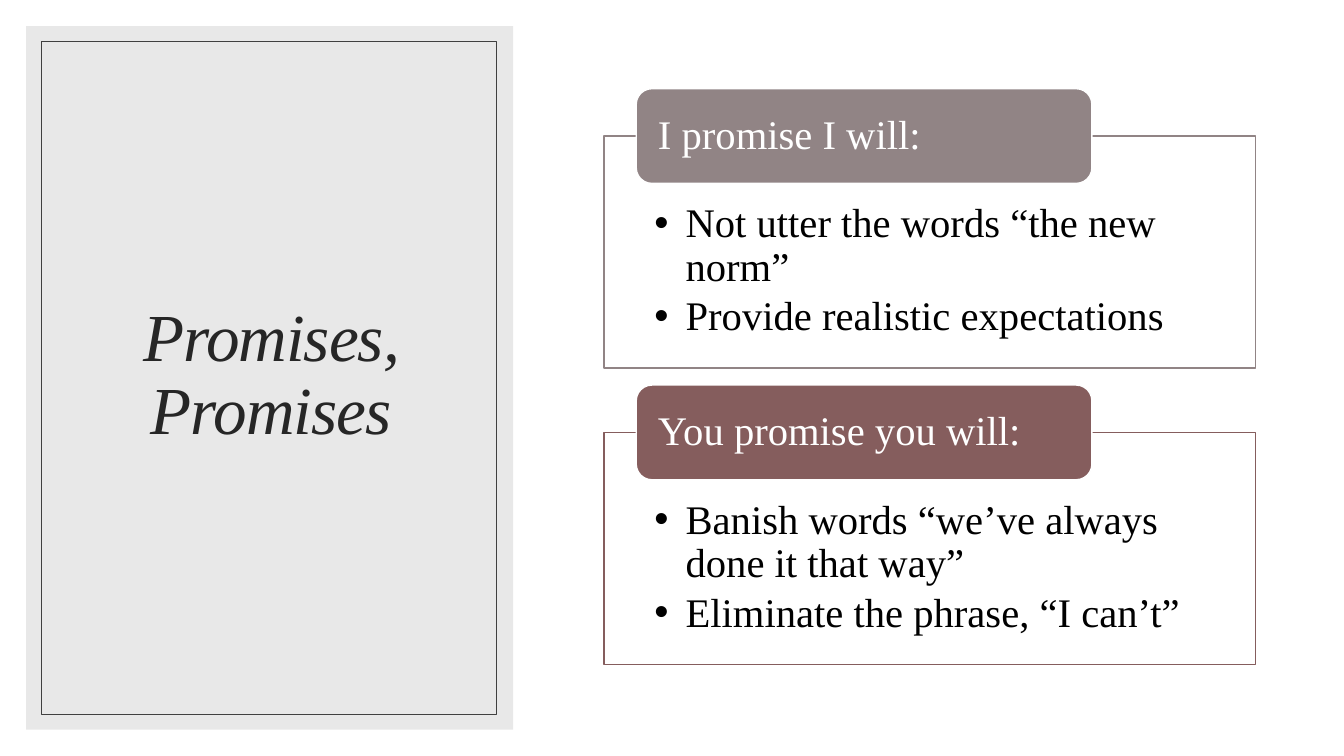
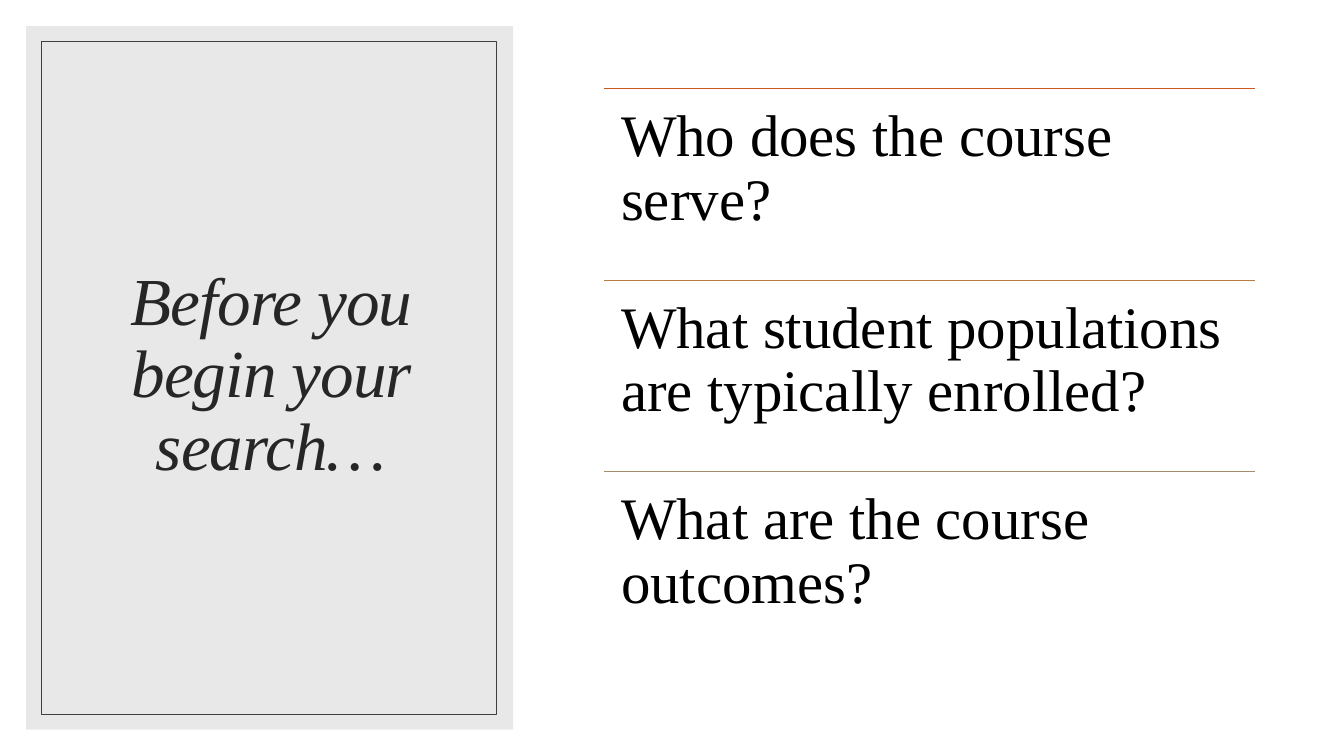
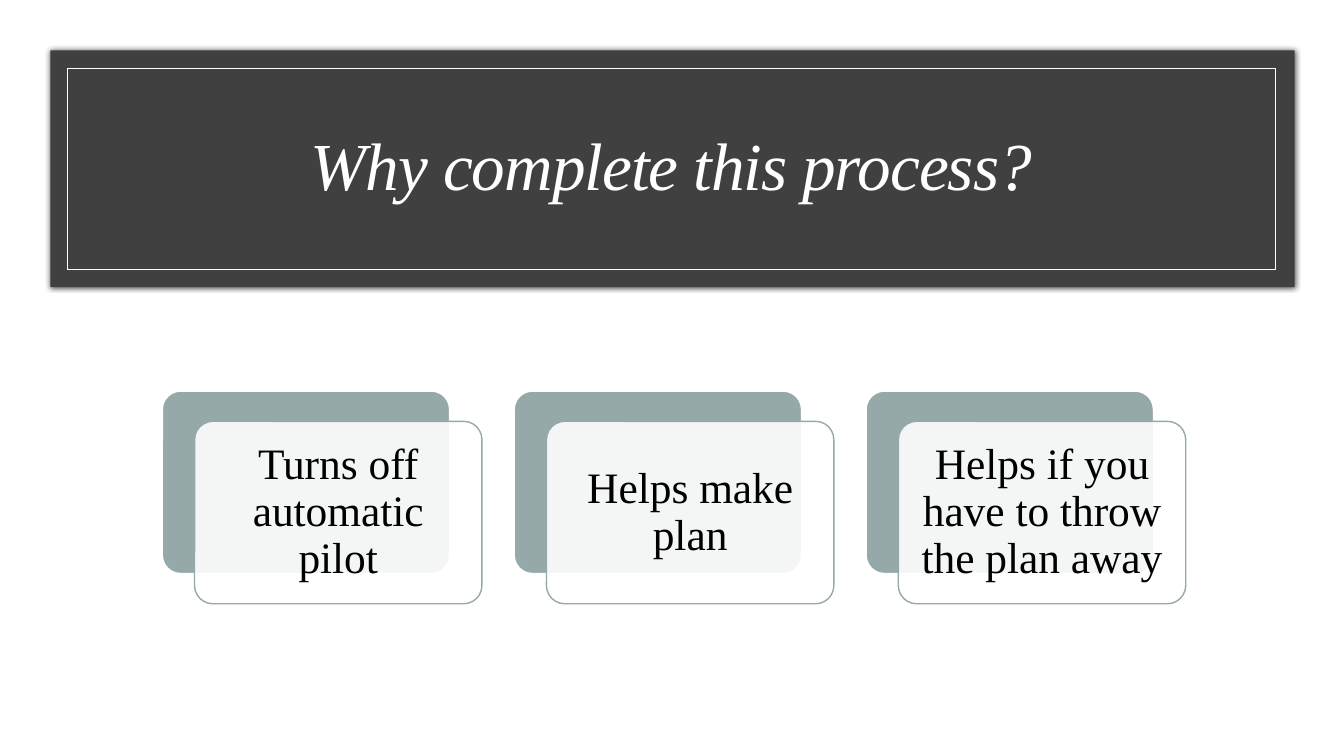
from lxml import etree
from pptx import Presentation
from pptx.dml.color import RGBColor
from pptx.enum.shapes import MSO_CONNECTOR, MSO_SHAPE
from pptx.enum.text import MSO_ANCHOR, MSO_AUTO_SIZE, PP_ALIGN
from pptx.oxml.ns import qn
from pptx.util import Pt

PX = 9144  # EMU in one px, 100 px to the inch
SLIDE_WIDTH, SLIDE_HEIGHT = 1333, 750
FONT = "Times New Roman"
COLORS = {
    "white": "FFFFFF",
    "black": "000000",
    "panel": "E8E8E8",
    "dark": "404040",
    "title": "262626",
    "taupe": "918485",
    "maroon": "855D5D",
    "orange": "CB581F",
    "copper": "BA7C41",
    "sand": "A28E6A",
    "sage": "96A9A9",
}
TWO_CONTENT_LAYOUT, TITLE_ONLY_LAYOUT = 3, 5
RECTANGLE, ROUNDED = MSO_SHAPE.RECTANGLE, MSO_SHAPE.ROUNDED_RECTANGLE
STRAIGHT = MSO_CONNECTOR.STRAIGHT
TOP, MIDDLE = MSO_ANCHOR.TOP, MSO_ANCHOR.MIDDLE
LEFT, CENTER = PP_ALIGN.LEFT, PP_ALIGN.CENTER
NO_AUTOFIT = MSO_AUTO_SIZE.NONE

CONTENT_LEFT, CONTENT_WIDTH = 599, 646


def emu(*lengths):
    return [length * PX for length in lengths]


def rgb(name):
    return RGBColor.from_string(COLORS[name])


def place(shape, box):
    shape.left, shape.top, shape.width, shape.height = emu(*box)


def paint(shape, fill=None, line=None, line_width=1):
    if fill:
        shape.fill.solid()
        shape.fill.fore_color.rgb = rgb(fill)
    else:
        shape.fill.background()
    if line:
        shape.line.color.rgb = rgb(line)
        shape.line.width = Pt(line_width)
    else:
        shape.line.fill.background()


def add_box(slide, kind, box, fill=None, line=None, line_width=1):
    shape = slide.shapes.add_shape(kind, *emu(*box))
    shape.shadow.inherit = False
    paint(shape, fill, line, line_width)
    return shape


def write(shape, lines, size, color, anchor=TOP, align=LEFT,
          insets=(10, 5, 10, 5), space_after=0):
    """Fill a shape with one paragraph per line; insets are left, top, right, bottom."""
    frame = shape.text_frame
    frame.text = "\n".join(lines)
    frame.word_wrap = True
    frame.auto_size = NO_AUTOFIT
    frame.vertical_anchor = anchor
    (frame.margin_left, frame.margin_top,
     frame.margin_right, frame.margin_bottom) = emu(*insets)
    for paragraph in frame.paragraphs:
        paragraph.alignment = align
        paragraph.line_spacing = 0.9
        paragraph.space_before = Pt(0)
        paragraph.space_after = Pt(space_after)
        paragraph.font.name = FONT
        paragraph.font.size = Pt(size)
        paragraph.font.color.rgb = rgb(color)


def set_title(slide, text, box, color):
    """Write the title and bring it in front of the panel behind it."""
    title = slide.shapes.title
    place(title, box)
    write(title, [text], 48, color, MIDDLE, CENTER)
    paragraph = title.text_frame.paragraphs[0]
    paragraph.font.italic = True
    paragraph.runs[0].font._element.set("spc", "-70")
    title.element.getparent().append(title.element)


def add_side_title(slide, text):
    add_box(slide, RECTANGLE, (26, 26, 483, 698), "panel")
    add_box(slide, RECTANGLE, (41, 41, 451, 668), line="dark", line_width=0.5)
    set_title(slide, text, (63, 61, 412, 624), "title")


def add_soft_shadow(shape):
    effects = shape.element.spPr.find(qn("a:effectLst"))
    shadow = etree.SubElement(effects, qn("a:outerShdw"), blurRad=str(Pt(4)), dist="0",
                              dir="0", algn="ctr", rotWithShape="0")
    color = etree.SubElement(shadow, qn("a:srgbClr"), val=COLORS["black"])
    etree.SubElement(color, qn("a:alpha"), val="66000")


def set_opacity(shape, percent):
    color = shape.element.spPr.find(qn("a:solidFill")).find(qn("a:srgbClr"))
    etree.SubElement(color, qn("a:alpha"), val=str(percent * 1000))


def add_banner_title(slide, text):
    add_soft_shadow(add_box(slide, RECTANGLE, (50, 50, 1234, 235), "dark"))
    add_box(slide, RECTANGLE, (67, 68, 1198, 199), line="white", line_width=0.5)
    set_title(slide, text, (116, 92, 1100, 150), "white")


def add_promise(slide, placeholder, top, heading, items, color):
    """Outlined bullet list with a rounded heading across its upper edge."""
    place(placeholder, (CONTENT_LEFT, top + 47, CONTENT_WIDTH, 230))
    paint(placeholder, "white", color)
    write(placeholder, items, 29, "black", insets=(50, 66, 50, 23), space_after=4)
    for paragraph in placeholder.text_frame.paragraphs:
        properties = paragraph._p.get_or_add_pPr()
        properties.set("marL", str(31 * PX))
        properties.set("indent", str(-31 * PX))
    header = add_box(slide, ROUNDED, (CONTENT_LEFT + 32, top, 452, 94), color, "white")
    write(header, [heading], 29, "white", MIDDLE, insets=(17, 0, 17, 0))


def add_question(slide, top, text, color):
    rule = slide.shapes.add_connector(
        STRAIGHT, *emu(CONTENT_LEFT, top, CONTENT_LEFT + CONTENT_WIDTH, top))
    rule.line.color.rgb = rgb(color)
    rule.line.width = Pt(1)
    etree.SubElement(rule.element.spPr, qn("a:effectLst"))
    question = slide.shapes.add_textbox(*emu(CONTENT_LEFT, top, CONTENT_WIDTH, 190))
    write(question, [text], 42, "black", insets=(17, 17, 17, 17))


def add_card(slide, left, top, text):
    """Translucent text card over an offset solid card."""
    width, height = 285, 181
    back = add_box(slide, ROUNDED, (left, top, width, height), "sage", "white")
    front = add_box(slide, ROUNDED, (left + 32, top + 30, width, height), "white", "sage")
    for card in (back, front):
        card.adjustments[0] = 0.1
    set_opacity(front, 90)
    write(front, [text], 31, "black", MIDDLE, CENTER, insets=(13, 13, 13, 13))


def build_promises(presentation):
    slide = presentation.slides.add_slide(presentation.slide_layouts[TWO_CONTENT_LAYOUT])
    add_side_title(slide, "Promises, Promises")
    promises = [
        ("I promise I will:",
         ["Not utter the words “the new norm”", "Provide realistic expectations"], "taupe"),
        ("You promise you will:",
         ["Banish words “we’ve always done it that way”",
          "Eliminate the phrase, “I can’t”"], "maroon"),
    ]
    for index, promise in enumerate(promises):
        add_promise(slide, slide.placeholders[index + 1], 88 + 294 * index, *promise)


def build_questions(presentation):
    slide = presentation.slides.add_slide(presentation.slide_layouts[TITLE_ONLY_LAYOUT])
    add_side_title(slide, "Before you begin your search…")
    questions = [
        ("Who does the course serve?", "orange"),
        ("What student populations are typically enrolled?", "copper"),
        ("What are the course outcomes?", "sand"),
    ]
    for index, question in enumerate(questions):
        add_question(slide, 88 + 190 * index, *question)


def build_reasons(presentation):
    slide = presentation.slides.add_slide(presentation.slide_layouts[TITLE_ONLY_LAYOUT])
    add_banner_title(slide, "Why complete this process?")
    reasons = ["Turns off automatic pilot", "Helps make plan",
               "Helps if you have to throw the plan away"]
    for index, reason in enumerate(reasons):
        add_card(slide, 161 + 349 * index, 388, reason)


def main():
    presentation = Presentation()
    presentation.slide_width, presentation.slide_height = emu(SLIDE_WIDTH, SLIDE_HEIGHT)
    build_promises(presentation)
    build_questions(presentation)
    build_reasons(presentation)
    presentation.save("out.pptx")


if __name__ == "__main__":
    main()
